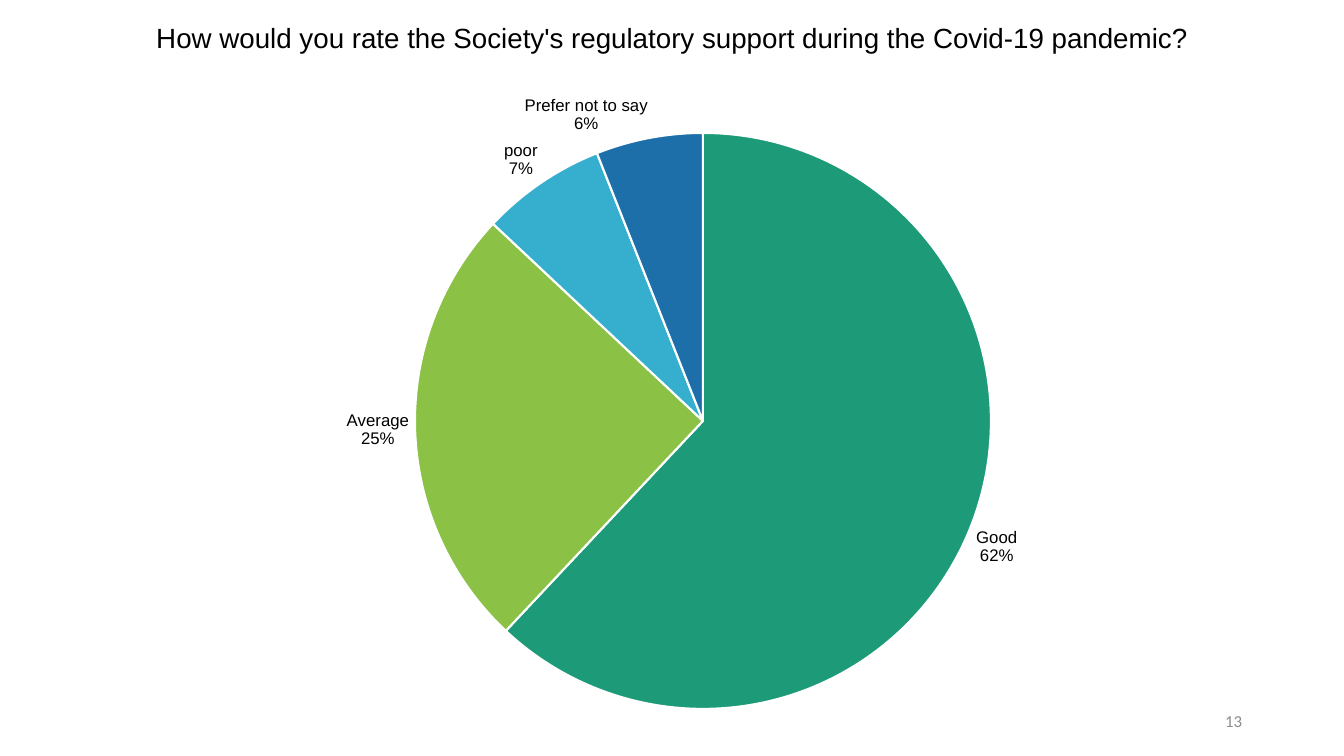
import lxml.etree
import pptx
import pptx.chart.data
import pptx.dml.color
import pptx.enum.chart
import pptx.enum.text
import pptx.oxml.ns
import pptx.util

EMU_PER_PX = 914400 / 100.8
COLORS = {
    "text": "000000",
    "number": "8C8C8C",
    "white": "FFFFFF",
    "Good": "1D9A78",
    "Average": "8BC145",
    "poor": "36AFCE",
    "Prefer not to say": "1D6FA9",
}
RATINGS = {"Good": 62, "Average": 25, "poor": 7, "Prefer not to say": 6}
CHART_BOX = (108, 80, 1159, 644)
PIE_BOX = (415, 133, 576, 576)


def px(length):
    return pptx.util.Emu(round(length * EMU_PER_PX))


def rgb(name):
    return pptx.dml.color.RGBColor.from_string(COLORS[name])


def style_font(font, name, size, color):
    font.name = name
    font.size = pptx.util.Pt(size)
    font.color.rgb = rgb(color)


def fill_text(shape, text, align, name, size, color):
    frame = shape.text_frame
    frame.word_wrap = True
    frame.vertical_anchor = pptx.enum.text.MSO_ANCHOR.MIDDLE
    frame.text = text
    para = frame.paragraphs[0]
    para.alignment = align
    style_font(para.runs[0].font, name, size, color)
    return para


def add_title(page, text):
    title = page.shapes.title
    title.left, title.top, title.width, title.height = map(px, (0, 0, 1344, 80))
    para = fill_text(title, text, pptx.enum.text.PP_ALIGN.CENTER, "Arial", 19.8, "text")
    para.line_spacing = 0.9


def add_page_number(page, text):
    box = page.shapes.add_textbox(*map(px, (950, 701, 302, 40)))
    fill_text(box, text, pptx.enum.text.PP_ALIGN.RIGHT, "Calibri", 12, "number")


def place_pie(plot):
    tag = pptx.oxml.ns.qn
    area = plot._element.getparent()
    for old_layout in area.findall(tag("c:layout")):
        area.remove(old_layout)
    layout = lxml.etree.Element(tag("c:layout"))
    manual = lxml.etree.SubElement(layout, tag("c:manualLayout"))
    left, top, width, height = CHART_BOX
    pie_left, pie_top, pie_width, pie_height = PIE_BOX
    settings = {
        "layoutTarget": "inner",
        "xMode": "edge",
        "yMode": "edge",
        "x": (pie_left - left) / width,
        "y": (pie_top - top) / height,
        "w": pie_width / width,
        "h": pie_height / height,
    }
    for name, value in settings.items():
        lxml.etree.SubElement(manual, tag("c:" + name)).set("val", str(value))
    area.insert(0, layout)


def label_slices(series):
    labels = series.data_labels
    labels.show_value = False
    labels.show_category_name = True
    labels.show_percentage = True
    labels.number_format = "0%"
    labels.number_format_is_linked = False
    labels.position = pptx.enum.chart.XL_LABEL_POSITION.OUTSIDE_END
    style_font(labels.font, "Arial", 12, "text")
    separator = lxml.etree.Element(pptx.oxml.ns.qn("c:separator"))
    separator.text = "\n"
    labels._element.find(pptx.oxml.ns.qn("c:showBubbleSize")).addnext(separator)


def add_rating_pie(page):
    data = pptx.chart.data.CategoryChartData()
    data.categories = list(RATINGS)
    data.add_series("Series 1", list(RATINGS.values()))
    pie_type = pptx.enum.chart.XL_CHART_TYPE.PIE
    chart = page.shapes.add_chart(pie_type, *map(px, CHART_BOX), data).chart
    chart.has_title = False
    chart.has_legend = False
    style_font(chart.font, "Calibri", 10, "text")
    plot = chart.plots[0]
    plot.vary_by_categories = True
    series = plot.series[0]
    for index, rating in enumerate(RATINGS):
        slice_format = series.points[index].format
        slice_format.fill.solid()
        slice_format.fill.fore_color.rgb = rgb(rating)
        slice_format.line.color.rgb = rgb("white")
        slice_format.line.width = pptx.util.Pt(1.5)
    label_slices(series)
    place_pie(plot)


def main():
    deck = pptx.Presentation()
    deck.slide_width, deck.slide_height = px(1344), px(756)
    page = deck.slides.add_slide(deck.slide_layouts[5])
    add_title(page, "How would you rate the Society's regulatory support during the Covid-19 pandemic?")
    add_rating_pie(page)
    add_page_number(page, "13")
    deck.save("out.pptx")


if __name__ == "__main__":
    main()
